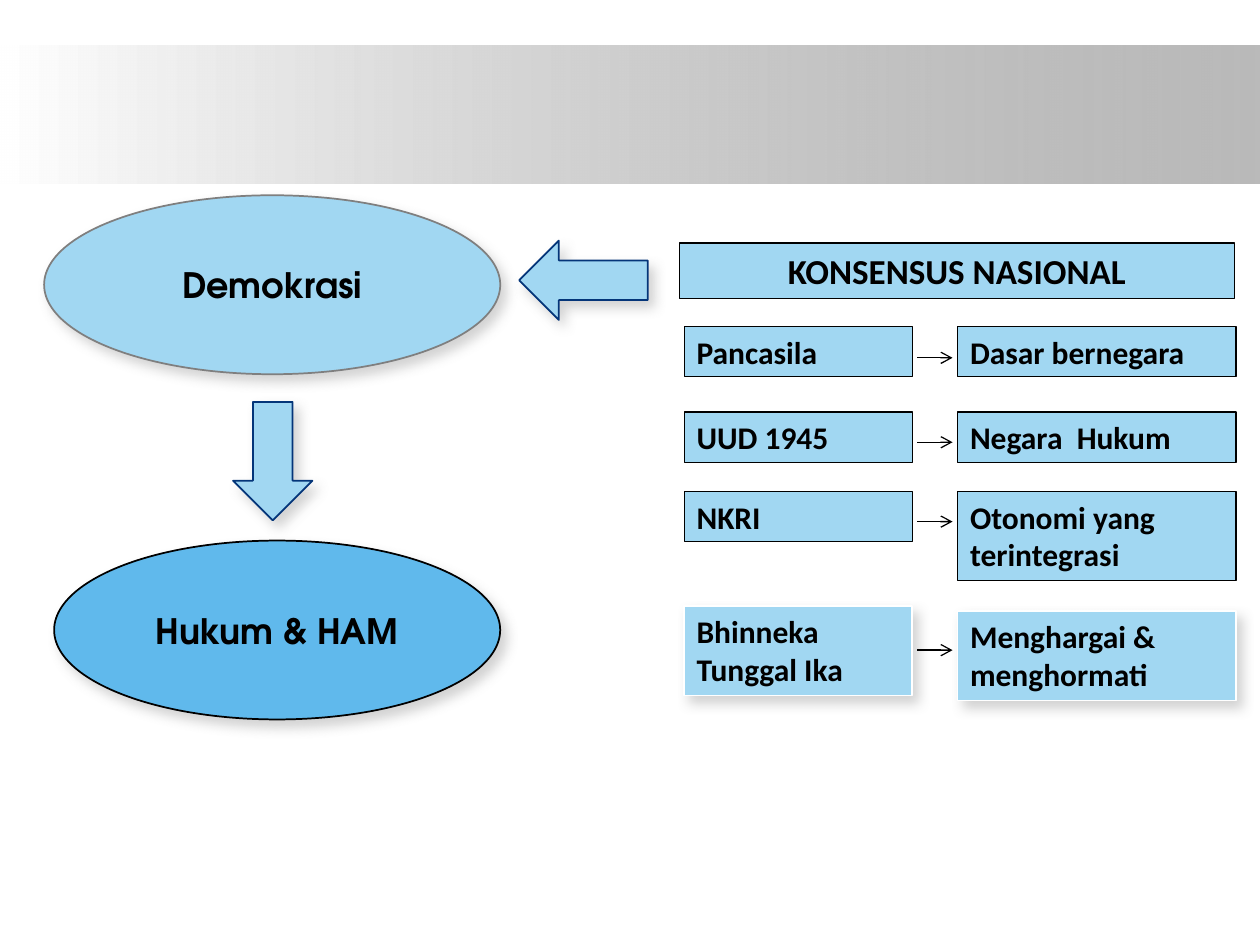
import dataclasses

import pptx
import pptx.dml.color
import pptx.enum.shapes
import pptx.enum.text
import pptx.oxml
import pptx.oxml.ns
import pptx.util
from pptx.util import Inches

SHAPES = pptx.enum.shapes.MSO_SHAPE
ALIGN = pptx.enum.text.PP_ALIGN
ANCHOR = pptx.enum.text.MSO_ANCHOR


@dataclasses.dataclass(frozen=True)
class Theme:
    sky: str = "A1D7F2"
    blue: str = "60B9EC"
    navy: str = "043579"
    grey: str = "7F7F7F"
    band: str = "808080"
    white: str = "FFFFFF"
    black: str = "000000"
    body_font: str = "Calibri"
    oval_font: str = "TeX Gyre Adventor"
    body_size: int = 18
    head_size: int = 20


THEME = Theme()


def rgb(color):
    return pptx.dml.color.RGBColor.from_string(color)


def add_effects(shape, content=""):
    """Give the shape its own effect list; an empty one means no shadow."""
    namespace = pptx.oxml.ns.nsdecls("a")
    shape._element.spPr.append(
        pptx.oxml.parse_xml(f"<a:effectLst {namespace}>{content}</a:effectLst>"))


def add_shadow(shape):
    """Soft grey shadow falling to the lower right."""
    add_effects(shape, f'<a:outerShdw blurRad="{pptx.util.Pt(7)}" '
                f'dist="{pptx.util.Pt(5)}" dir="{50 * 60000}" algn="tl" rotWithShape="0">'
                '<a:srgbClr val="808080"><a:alpha val="35000"/></a:srgbClr>'
                '</a:outerShdw>')


def add_block(slide, kind, box, fill=THEME.sky, line=THEME.black,
              line_width=1, shadow=False):
    shape = slide.shapes.add_shape(kind, *map(Inches, box))
    shape.fill.solid()
    shape.fill.fore_color.rgb = rgb(fill)
    shape.line.color.rgb = rgb(line)
    shape.line.width = pptx.util.Pt(line_width)
    if shadow:
        add_shadow(shape)
    else:
        shape.shadow.inherit = False
    return shape


def write_text(shape, text, size=THEME.body_size, font=THEME.body_font,
               align=ALIGN.LEFT, anchor=ANCHOR.TOP, grow=True):
    """Fill the shape with bold text, one paragraph per line."""
    frame = shape.text_frame
    frame.word_wrap = True
    frame.vertical_anchor = anchor
    if grow:
        frame.auto_size = pptx.enum.text.MSO_AUTO_SIZE.SHAPE_TO_FIT_TEXT
    frame.text = text
    for paragraph in frame.paragraphs:
        paragraph.alignment = align
        paragraph.font.name = font
        paragraph.font.size = pptx.util.Pt(size)
        paragraph.font.bold = True
        paragraph.font.color.rgb = rgb(THEME.black)


def add_band(slide):
    """Header band fading from white to translucent grey."""
    band = slide.shapes.add_shape(SHAPES.RECTANGLE, 0, Inches(0.36),
                                  Inches(10), Inches(1.1))
    band.shadow.inherit = False
    band.line.fill.background()
    band.fill.gradient()
    band.fill.gradient_angle = 0
    start, end = band.fill.gradient_stops
    start.position, end.position = 0, 1
    start.color.rgb = rgb(THEME.white)
    end.color.rgb = rgb(THEME.band)
    end_color = band._element.spPr.findall(".//" + pptx.oxml.ns.qn("a:srgbClr"))[-1]
    end_color.append(pptx.oxml.parse_xml(
        f'<a:alpha {pptx.oxml.ns.nsdecls("a")} val="54000"/>'))


def add_oval(slide, text, box, fill, line):
    oval = add_block(slide, SHAPES.OVAL, box, fill, line, shadow=True)
    write_text(oval, text, size=THEME.head_size, font=THEME.oval_font,
               align=ALIGN.CENTER, anchor=ANCHOR.MIDDLE, grow=False)


def add_card(slide, text, box, raised=False):
    line, width = (THEME.white, 1) if raised else (THEME.black, 0.75)
    card = add_block(slide, SHAPES.RECTANGLE, box, line=line,
                     line_width=width, shadow=raised)
    write_text(card, text)


def add_link(slide, y):
    """Thin arrow from a pillar to its meaning."""
    link = slide.shapes.add_connector(
        pptx.enum.shapes.MSO_CONNECTOR.STRAIGHT,
        Inches(7.28), Inches(y), Inches(7.56), Inches(y))
    link.line.color.rgb = rgb(THEME.black)
    link.line.width = pptx.util.Pt(0.75)
    link.line._get_or_add_ln().append(pptx.oxml.parse_xml(
        f'<a:tailEnd {pptx.oxml.ns.nsdecls("a")} type="arrow"/>'))
    add_effects(link)


def main():
    deck = pptx.Presentation()
    deck.slide_width, deck.slide_height = Inches(10), Inches(7.5)
    slide = deck.slides.add_slide(deck.slide_layouts[6])
    add_band(slide)

    # Left: democracy leading to law and human rights
    add_oval(slide, "Demokrasi", (0.35, 1.55, 3.62, 1.42), THEME.sky, THEME.grey)
    add_oval(slide, "Hukum & HAM", (0.43, 4.29, 3.54, 1.42), THEME.blue, THEME.black)
    for kind, box in ((SHAPES.DOWN_ARROW, (1.85, 3.19, 0.63, 0.94)),
                      (SHAPES.LEFT_ARROW, (4.12, 1.91, 1.02, 0.63))):
        add_block(slide, kind, box, line=THEME.navy, shadow=True)

    # Right: national consensus heading
    consensus = add_block(slide, SHAPES.RECTANGLE, (5.39, 1.93, 4.41, 0.44),
                          line_width=0.75)
    write_text(consensus, "KONSENSUS NASIONAL", size=THEME.head_size,
               align=ALIGN.CENTER)

    # Pillars and meanings: (text, top) for each side, link height, raised
    one_line, two_lines = 0.4, 0.71
    rows = (
        ("Pancasila", 2.59, one_line, "Dasar bernegara", 2.59, one_line, 2.84, False),
        ("UUD 1945", 3.27, one_line, "Negara  Hukum", 3.27, one_line, 3.51, False),
        ("NKRI", 3.9, one_line, "Otonomi yang\nterintegrasi", 3.9, two_lines, 4.14, False),
        ("Bhinneka Tunggal Ika", 4.81, two_lines,
         "Menghargai & menghormati", 4.85, two_lines, 5.16, True),
    )
    for (pillar, pillar_top, pillar_height,
         meaning, meaning_top, meaning_height, link_y, raised) in rows:
        add_card(slide, pillar, (5.43, pillar_top, 1.81, pillar_height), raised)
        add_card(slide, meaning, (7.6, meaning_top, 2.21, meaning_height), raised)
        add_link(slide, link_y)

    deck.save("out.pptx")


if __name__ == "__main__":
    main()
